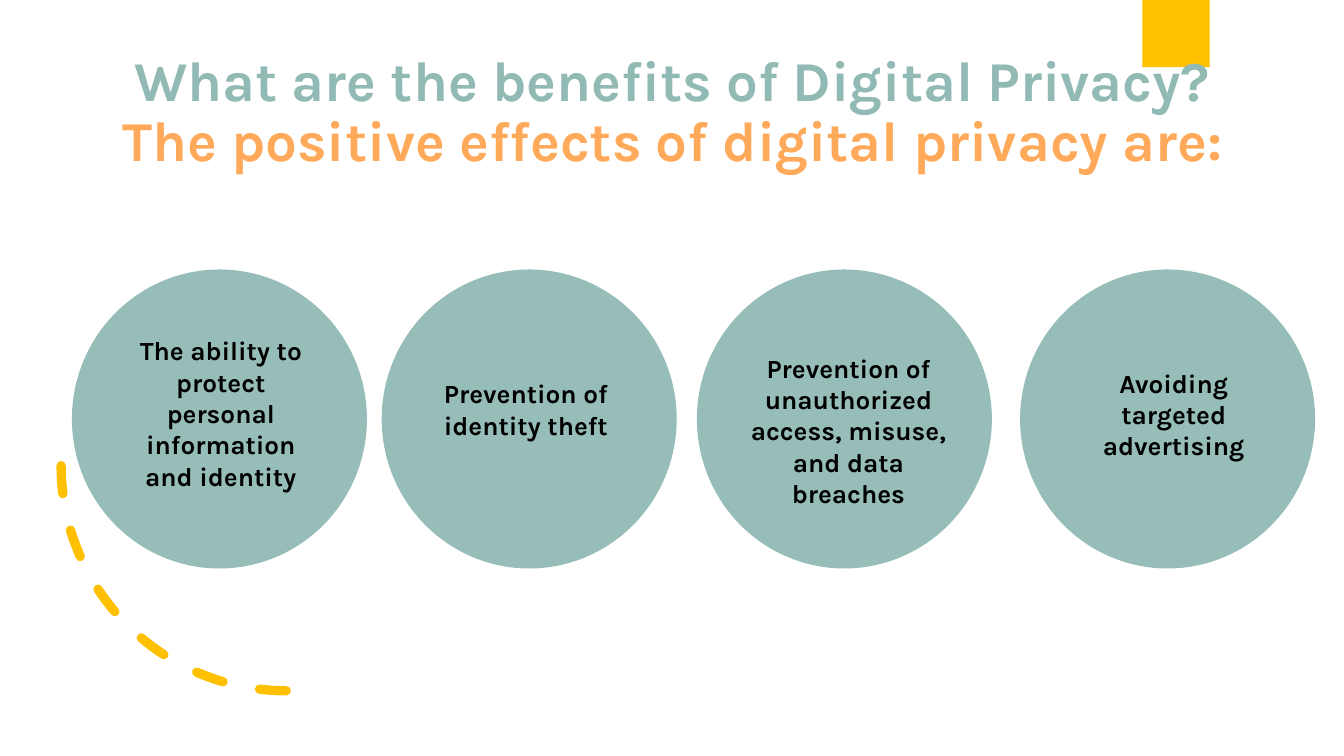
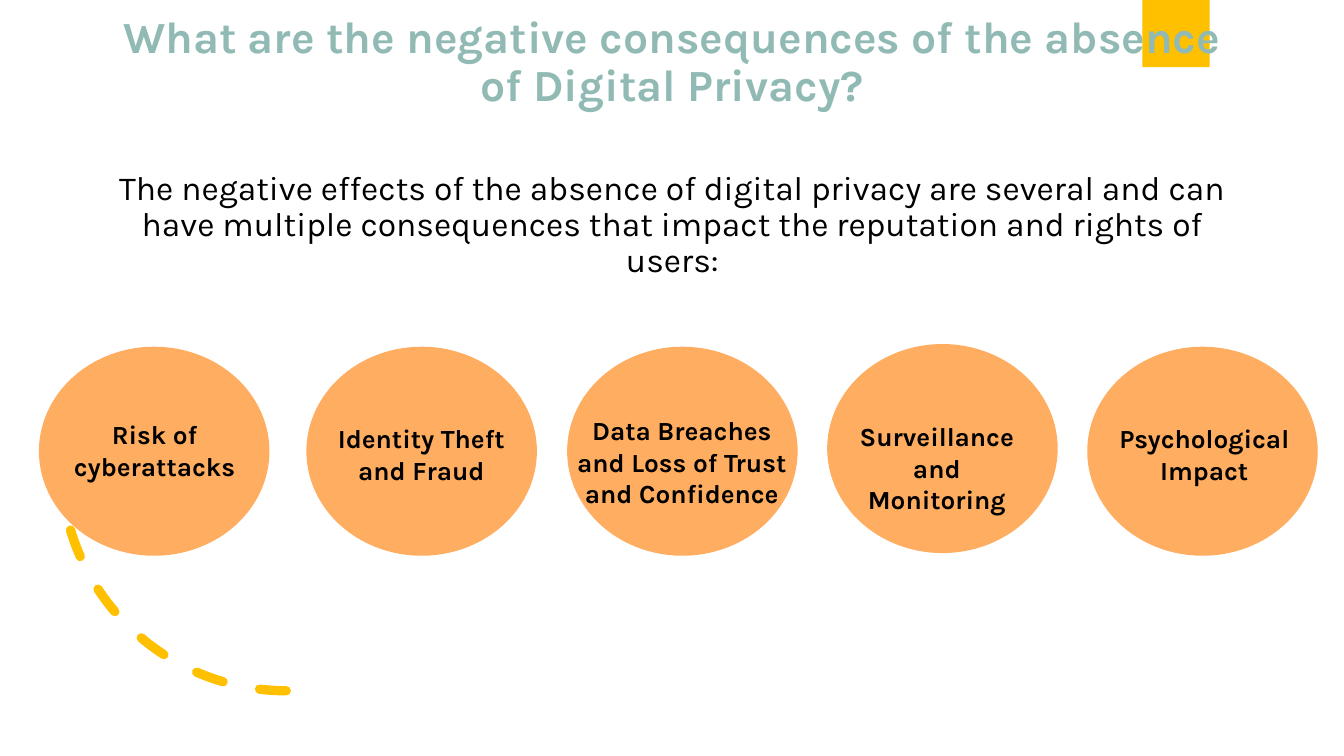
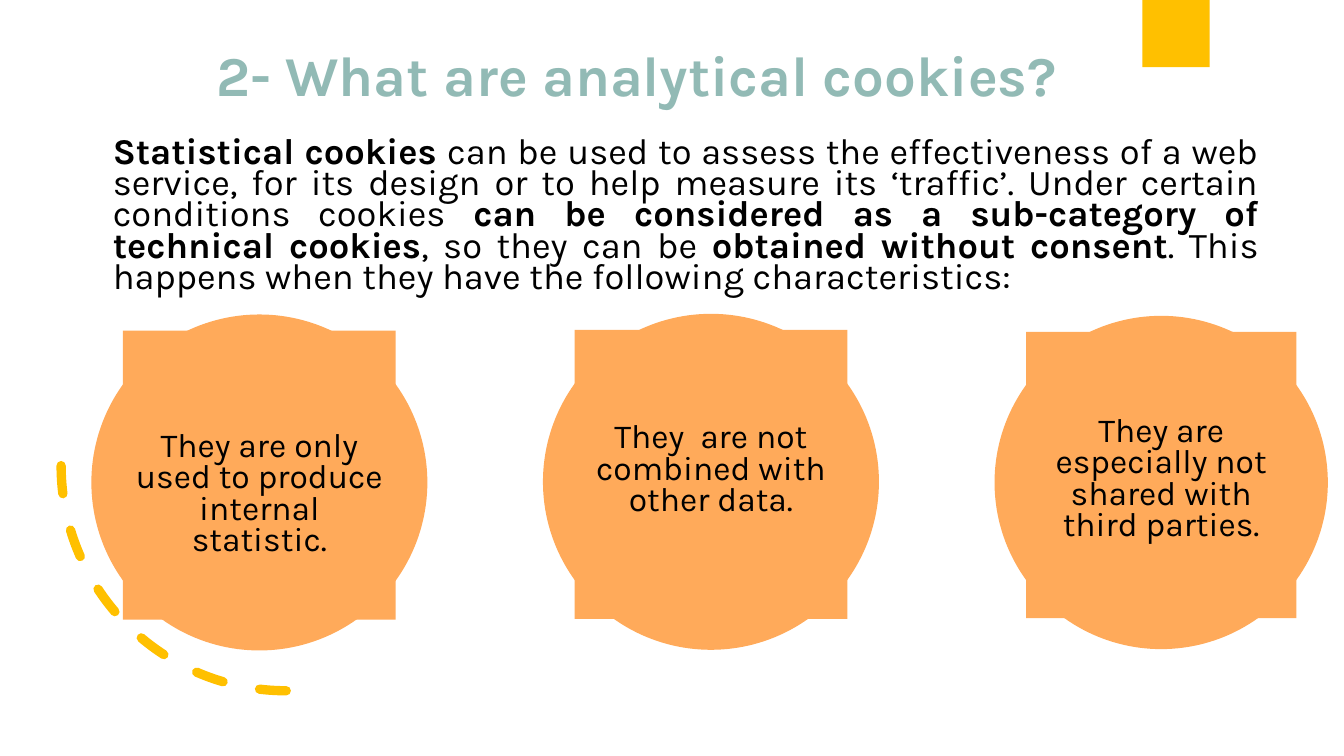
import math
import pptx
import pptx.util
import pptx.dml.color
import pptx.enum.dml
import pptx.enum.shapes
import pptx.enum.text

Inches, Pt = pptx.util.Inches, pptx.util.Pt
Align = pptx.enum.text.PP_ALIGN
Anchor = pptx.enum.text.MSO_ANCHOR
Kind = pptx.enum.shapes.MSO_SHAPE

theme = {
    "font": "Karla",
    "sun": "FFC000",
    "sage": "96BDB8",
    "peach": "FFAD60",
    "amber": "FFAA5A",
    "styles": {
        "head": ("92BAB5", {"size": Pt(60.3), "bold": True}),
        "sub": ("FFAA5A", {"size": Pt(60.3), "bold": True}),
        "long": ("92BAB5", {"size": Pt(47.7), "bold": True}),
        "lead": ("000000", {"size": Pt(36), "bold": False}),
        "body": ("000000", {"size": Pt(38.9), "bold": False}),
        "key": ("000000", {"size": Pt(38.9), "bold": True}),
        "label": ("000000", {"size": Pt(28), "bold": True}),
        "note": ("000000", {"size": Pt(36), "bold": False}),
    },
    "title": {"alignment": Align.CENTER, "line_spacing": 0.9},
    "prose": {"alignment": Align.JUSTIFY, "line_spacing": 0.72},
    "tag": {"alignment": Align.CENTER, "line_spacing": Pt(33.6)},
}
bare = dict.fromkeys(("margin_left", "margin_top", "margin_right", "margin_bottom"), 0)


def paint(shape, color):
    shape.shadow.inherit = False
    shape.fill.solid()
    shape.fill.fore_color.rgb = pptx.dml.color.RGBColor.from_string(color)
    shape.line.fill.background()


def write(slide, place, paras, form, frame):
    box = slide.shapes.add_textbox(*map(Inches, place)).text_frame
    for name, value in {"word_wrap": True, **frame}.items():
        setattr(box, name, value)
    for i, runs in enumerate(paras):
        para = box.paragraphs[0] if i == 0 else box.add_paragraph()
        for name, value in form.items():
            setattr(para, name, value)
        for text, style in runs:
            run = para.add_run()
            run.text = text
            color, looks = theme["styles"][style]
            for name, value in {"name": theme["font"], **looks}.items():
                setattr(run.font, name, value)
            run.font.color.rgb = pptx.dml.color.RGBColor.from_string(color)
    return box


deck = pptx.Presentation()
deck.slide_width, deck.slide_height = Inches(20), Inches(11.25)

pages = [
    {
        "title": [
            [("What are the benefits of Digital Privacy?", "head")],
            [("The positive effects of digital privacy are:", "sub")],
        ],
        "place": (1.38, 0.6, 17.25, 2.17),
        "anchor": Anchor.MIDDLE,
        "fill": "sage",
        "style": "label",
        "discs": [
            ((1.07, 4.01, 4.39, 4.45), (1.84, 4.98, 2.89, 2.37),
             "The ability to protect personal information and identity"),
            ((5.68, 4.01, 4.39, 4.45), (6.44, 5.62, 2.77, 0.94),
             "Prevention of identity theft"),
            ((10.37, 4.01, 4.39, 4.45), (11.05, 5.24, 3.15, 2.37),
             "Prevention of unauthorized access, misuse, and data breaches"),
            ((15.18, 4.01, 4.39, 4.45), (15.99, 5.46, 2.95, 1.42),
             "Avoiding targeted advertising"),
        ],
    },
    {
        "title": [
            [("What are the negative consequences of the absence of Digital Privacy?", "long")],
            [("The negative effects of the absence of digital privacy are several and can "
              "have multiple consequences that impact the reputation and rights of users:", "lead")],
        ],
        "place": (1.38, 0.18, 17.25, 4.06),
        "anchor": Anchor.TOP,
        "gap": 64,
        "fill": "peach",
        "style": "label",
        "discs": [
            ((0.58, 5.16, 3.43, 3.11), (1.07, 6.23, 2.46, 0.94), "Risk of cyberattacks"),
            ((4.56, 5.16, 3.43, 3.11), (4.8, 6.29, 2.94, 0.94), "Identity Theft and Fraud"),
            ((8.44, 5.16, 3.43, 3.11), (8.54, 6.17, 3.21, 1.42),
             "Data Breaches and Loss of Trust and Confidence"),
            ((12.31, 5.12, 3.43, 3.11), (12.55, 6.26, 2.78, 0.94), "Surveillance and Monitoring"),
            ((16.18, 5.16, 3.43, 3.11), (16.53, 6.29, 2.78, 0.94), "Psychological Impact"),
        ],
    },
    {
        "title": [[("2- What are analytical cookies?", "head")]],
        "place": (0.33, 0.6, 18.29, 1.14),
        "anchor": Anchor.MIDDLE,
        "prose": [[
            ("Statistical cookies ", "key"),
            ("can be used to assess the effectiveness of a web service, for its design or to help "
             "measure its ‘traffic’. Under certain conditions cookies ", "body"),
            ("can be considered as a sub-category of technical cookies", "key"),
            (", so they can be ", "body"),
            ("obtained without consent", "key"),
            (". This happens when they have the following characteristics:", "body"),
        ]],
        "fill": "amber",
        "style": "note",
        "square": True,
        "discs": [
            ((1.36, 4.68, 5, 5), (1.91, 6.44, 3.9, 1.45),
             "They are only used to produce internal statistic."),
            ((8.08, 4.67, 5, 5), (8.63, 6.31, 3.9, 1.91),
             "They  are not combined with other data."),
            ((14.8, 4.7, 4.96, 4.96), (15.33, 6.22, 3.9, 1.93),
             "They are especially not shared with third parties."),
        ],
    },
]

for page in pages:
    slide = deck.slides.add_slide(deck.slide_layouts[6])

    rim = [
        (17.68 + 0.95 * math.cos(math.radians(a)), max(0, 0.95 * math.sin(math.radians(a)) - 0.17))
        for a in range(10, 171, 4)
    ]
    pen = slide.shapes.build_freeform(*rim[0], scale=Inches(1))
    pen.add_line_segments(rim[1:], close=True)
    paint(pen.convert_to_shape(), theme["sun"])

    title = write(slide, page["place"], page["title"], theme["title"],
                  {"vertical_anchor": page["anchor"]})
    title.paragraphs[-1].space_before = Pt(page.get("gap", 0))

    arc = slide.shapes.add_shape(Kind.ARC, *map(Inches, (0.91, 3.58, 6.7, 6.7)))
    arc.shadow.inherit = False
    arc.rotation = 90
    arc.fill.background()
    arc.line.color.rgb = pptx.dml.color.RGBColor.from_string(theme["sun"])
    arc.line.width = Pt(10)
    arc.line.dash_style = pptx.enum.dml.MSO_LINE.DASH
    arc.line._get_or_add_ln().set("cap", "rnd")
    arc._element.spPr.xfrm.set("flipV", "1")

    if "prose" in page:
        write(slide, (1.58, 2.02, 17.25, 2.67), page["prose"], theme["prose"], {})

    for disc, label, text in page["discs"]:
        paint(slide.shapes.add_shape(Kind.OVAL, *map(Inches, disc)), theme[page["fill"]])
        if page.get("square"):
            x, y, wide, high = disc
            block = (x + 0.47, y + 0.24, wide - 0.94, high - 0.7)
            paint(slide.shapes.add_shape(Kind.RECTANGLE, *map(Inches, block)), theme[page["fill"]])
        write(slide, label, [[(text, page["style"])]], theme["tag"], bare)

deck.save("out.pptx")
